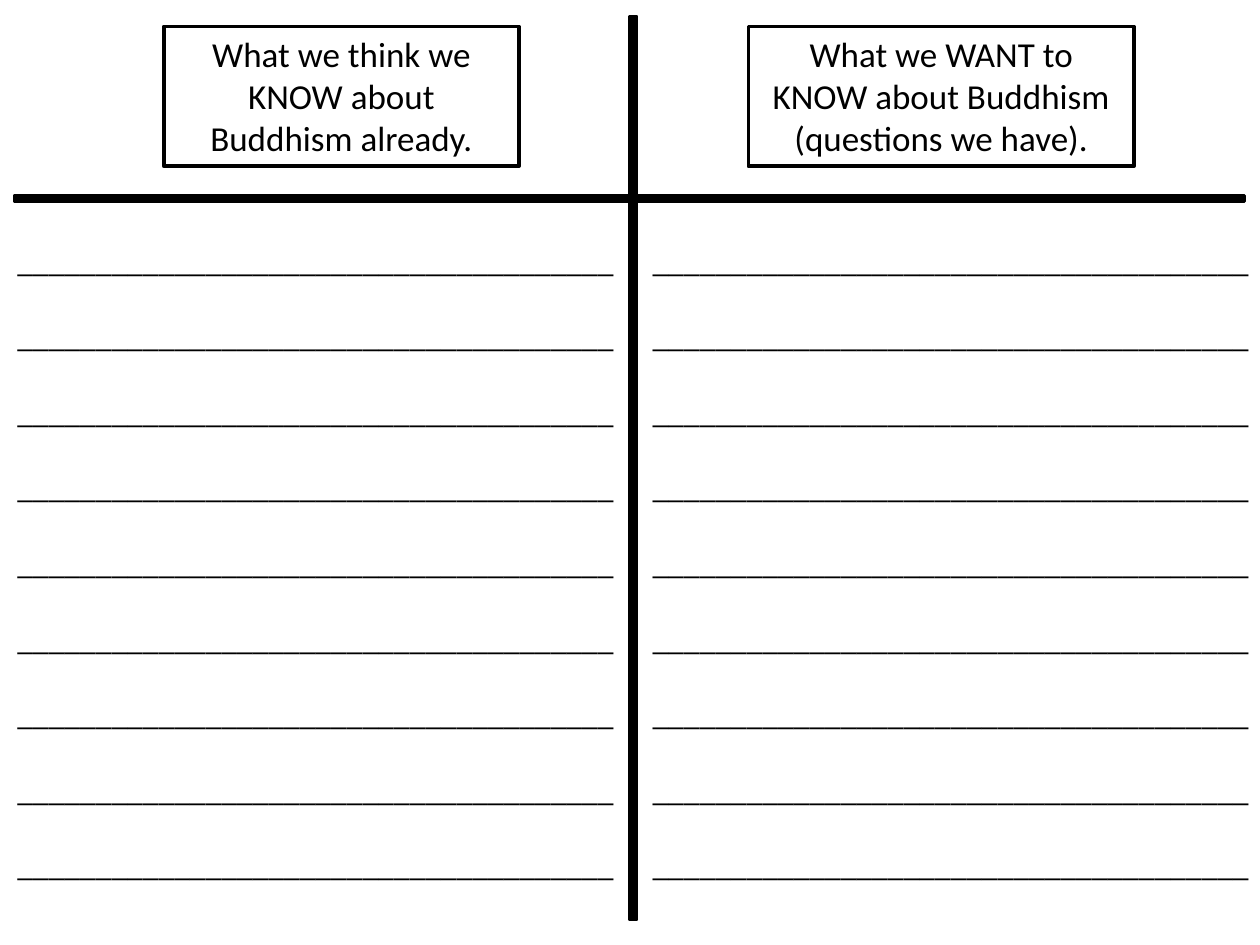
import pptx
import pptx.dml.color
import pptx.enum.shapes
import pptx.enum.text
import pptx.util

Pt = pptx.util.Pt
ALIGN = pptx.enum.text.PP_ALIGN
BLACK, WHITE = "000000", "FFFFFF"
RULE = "_" * 38
RULE_COUNT = 9


def rgb(color):
    return pptx.dml.color.RGBColor.from_string(color)


def add_rect(slide, x, y, w, h, fill):
    s = slide.shapes.add_shape(
        pptx.enum.shapes.MSO_SHAPE.RECTANGLE, Pt(x), Pt(y), Pt(w), Pt(h))
    s.shadow.inherit = False
    s.fill.solid()
    s.fill.fore_color.rgb = rgb(fill)
    s.line.color.rgb = rgb(BLACK)
    s.line.width = Pt(2)
    return s


def write(p, text, size=18, color=BLACK, align=ALIGN.LEFT, space_after=0):
    p.alignment = align
    p.space_after = Pt(space_after)
    r = p.add_run()
    r.text = text
    r.font.name = "Calibri"
    r.font.size = Pt(size)
    r.font.color.rgb = rgb(color)


def add_heading(slide, x, w, text):
    tf = add_rect(slide, x, 15.1, w, 79.9, WHITE).text_frame
    tf.word_wrap = True
    tf.vertical_anchor = pptx.enum.text.MSO_ANCHOR.TOP
    write(tf.paragraphs[0], text, size=20, align=ALIGN.CENTER)


def add_writing_lines(slide, x):
    """Add a column of ruled lines, each followed by one line of space."""
    tf = slide.shapes.add_textbox(Pt(x), Pt(133.9), Pt(357.1), Pt(378)).text_frame
    tf.word_wrap = True
    for i in range(RULE_COUNT):
        p = tf.add_paragraph() if i else tf.paragraphs[0]
        write(p, RULE, space_after=21.6 if i < RULE_COUNT - 1 else 0)


def main():
    prs = pptx.Presentation()
    prs.slide_width, prs.slide_height = Pt(720), Pt(540)
    slide = prs.slides.add_slide(prs.slide_layouts[6])

    add_rect(slide, 8.6, 111.6, 702.7, 3.6, BLACK)
    add_rect(slide, 360, 9.4, 3.6, 516.2, BLACK)
    add_heading(slide, 93.6, 203, "What we think we KNOW about Buddhism already.")
    add_heading(slide, 427.7, 220.3,
                "What we WANT to KNOW about Buddhism (questions we have).")
    for x in (2.9, 365.8):
        add_writing_lines(slide, x)

    prs.save("out.pptx")


if __name__ == "__main__":
    main()
